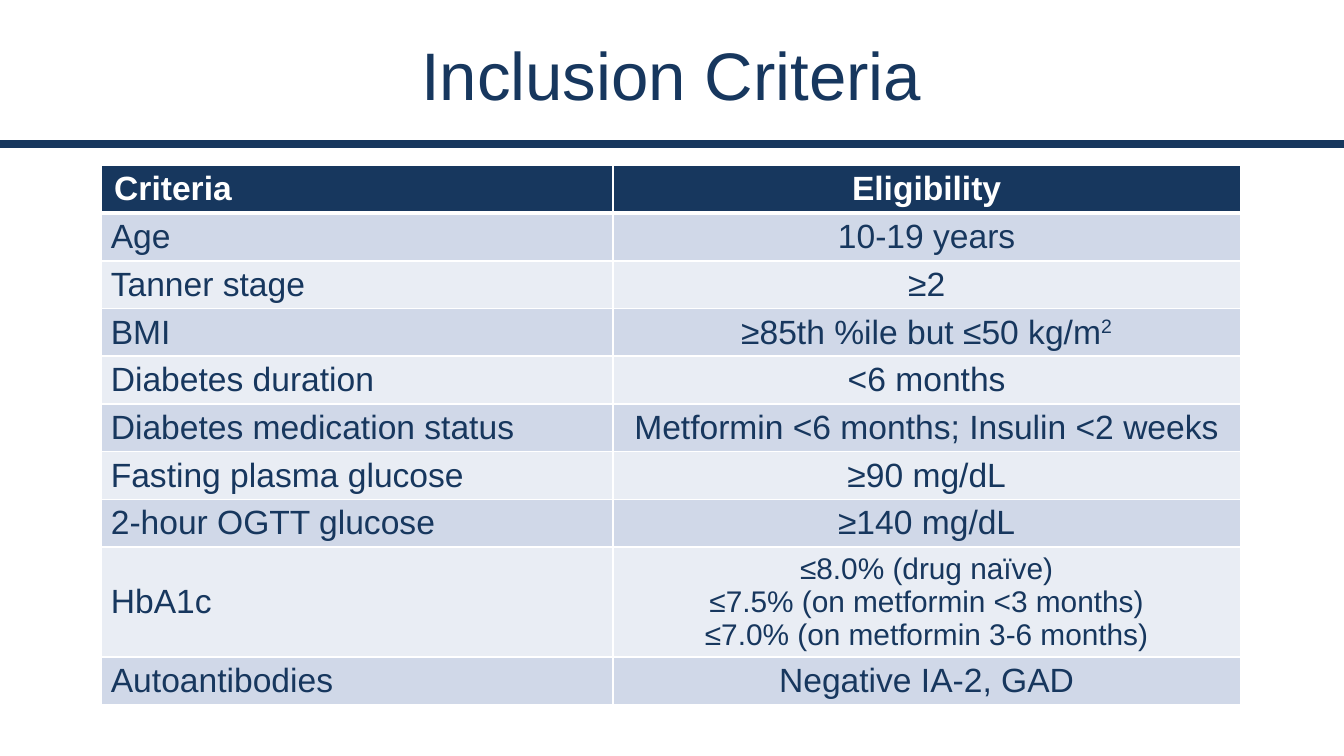
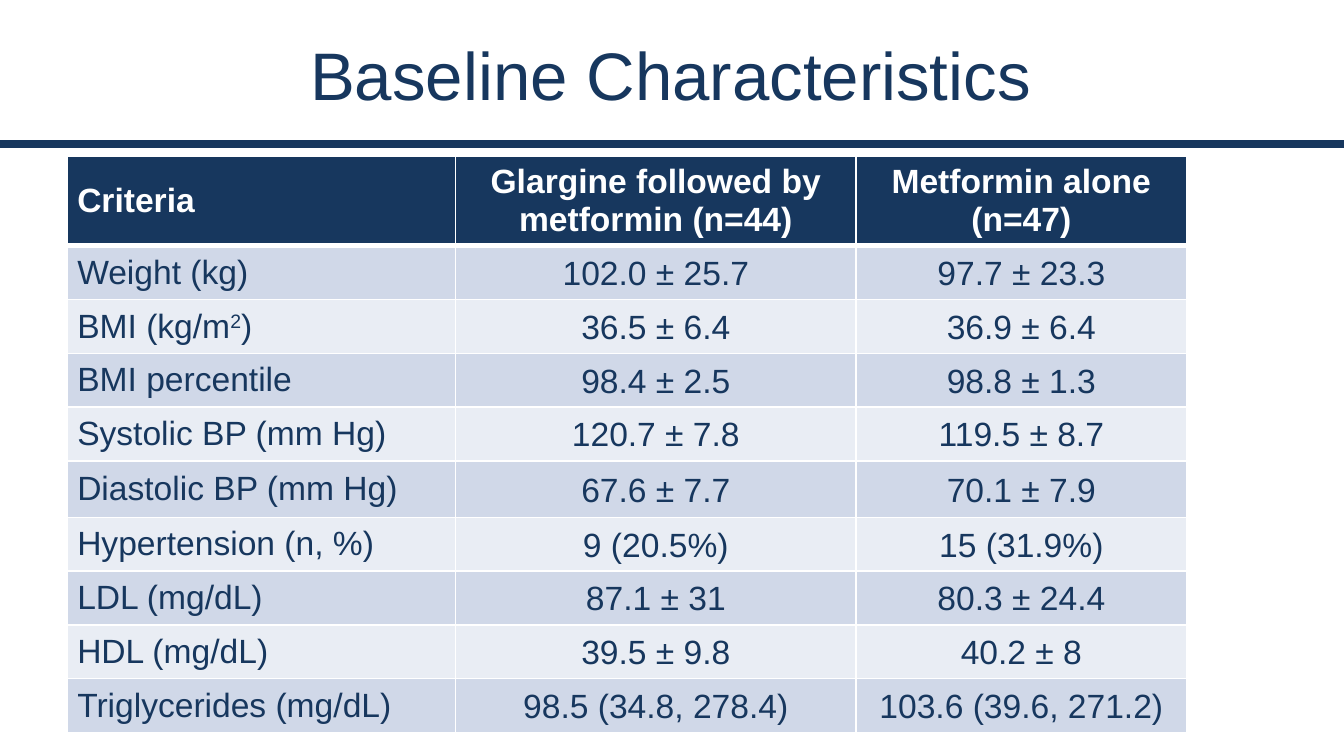
import dataclasses
import itertools

import lxml.etree
import pptx
import pptx.dml.color
import pptx.enum.shapes
import pptx.enum.text
import pptx.oxml.ns
import pptx.slide
import pptx.table
import pptx.text.text
import pptx.util

Inches = pptx.util.Inches
Align = pptx.enum.text.PP_ALIGN
MIDDLE = pptx.enum.text.MSO_ANCHOR.MIDDLE
WIDTH = Inches(10)
HEIGHT = WIDTH * 9 // 16
NAVY, WHITE = "17375E", "FFFFFF"
BANDS = ("D0D8E8", "E9EDF4")
INSET = (0.15 / 2, 0.15 / 4)


@dataclasses.dataclass(frozen=True)
class Page:
    """Title, table text and layout of one slide; ^ marks raised text."""
    title: str
    title_left: float
    title_width: float
    left: float
    top: float
    height: float
    widths: tuple[float, ...]
    tall: dict[int, float]
    row: float
    head_inset: tuple[float, float]
    value_inset: tuple[float, float]
    spacing: float | None
    rows: tuple[tuple[str, ...], ...]


PAGES = (
    Page(
        "Inclusion Criteria", 0.21, 9.57, 0.75, 1.23, 4.25, (3.81, 4.67),
        {1: 0.23}, 0.3, (0.1, INSET[1]), INSET, None,
        (
            ("Criteria", "Eligibility"),
            ("Age", "10-19 years"),
            ("Tanner stage", "≥2"),
            ("BMI", "≥85th %ile but ≤50 kg/m^2"),
            ("Diabetes duration", "<6 months"),
            ("Diabetes medication status", "Metformin <6 months; Insulin <2 weeks"),
            ("Fasting plasma glucose", "≥90 mg/dL"),
            ("2-hour OGTT glucose", "≥140 mg/dL"),
            ("HbA1c", "≤8.0% (drug naïve)\n≤7.5% (on metformin <3 months)\n"
                      "≤7.0% (on metformin 3-6 months)"),
            ("Autoantibodies", "Negative IA-2, GAD"),
        ),
    ),
    Page(
        "Baseline Characteristics", 0.12, 9.74, 0.5, 1.16, 4.3,
        (2.89, 2.98, 2.46), {0: 0.67, 5: 0.42}, 0.4, INSET, (0, 0), 1.07,
        (
            ("Criteria", "Glargine followed by metformin (n=44)", "Metformin alone\n(n=47)"),
            ("Weight (kg)", "102.0 ± 25.7", "97.7 ± 23.3"),
            ("BMI (kg/m^2^)", "36.5 ± 6.4", "36.9 ± 6.4"),
            ("BMI percentile", "98.4 ± 2.5", "98.8 ± 1.3"),
            ("Systolic BP (mm Hg)", "120.7 ± 7.8", "119.5 ± 8.7"),
            ("Diastolic BP (mm Hg)", "67.6 ± 7.7", "70.1 ± 7.9"),
            ("Hypertension (n, %)", "9 (20.5%)", "15 (31.9%)"),
            ("LDL (mg/dL)", "87.1 ± 31", "80.3 ± 24.4"),
            ("HDL (mg/dL)", "39.5 ± 9.8", "40.2 ± 8"),
            ("Triglycerides (mg/dL)", "98.5 (34.8, 278.4)", "103.6 (39.6, 271.2)"),
        ),
    ),
)


def paint(target: object, color: str) -> None:
    if hasattr(target, "solid"):
        target.solid()
        target = target.fore_color
    target.rgb = pptx.dml.color.RGBColor.from_string(color)


def assign(target: object, values: dict[str, object]) -> None:
    for name, value in values.items():
        setattr(target, name, value)


def inset(target: object, across: float, down: float) -> None:
    assign(target, {
        "margin_left": Inches(across), "margin_right": Inches(across),
        "margin_top": Inches(down), "margin_bottom": Inches(down),
        "vertical_anchor": MIDDLE,
    })


def style(font: pptx.text.text.Font, size: float, color: str, bold: bool = False) -> None:
    assign(font, {"name": "Arial", "size": pptx.util.Pt(size), "bold": bold})
    paint(font.color, color)


def border(cell: pptx.table._Cell, bottom: float) -> None:
    props = cell._tc.get_or_add_tcPr()
    for side, width in (("L", 1), ("R", 1), ("T", 1), ("B", bottom)):
        line = lxml.etree.SubElement(
            props, pptx.oxml.ns.qn(f"a:ln{side}"), w=str(pptx.util.Pt(width)))
        fill = lxml.etree.SubElement(line, pptx.oxml.ns.qn("a:solidFill"))
        lxml.etree.SubElement(fill, pptx.oxml.ns.qn("a:srgbClr"), val=WHITE)


def write(cell: pptx.table._Cell, text: str, size: float, color: str, bold: bool,
          form: dict[str, object]) -> None:
    cell.text = "\n" * text.count("\n")
    for para, line in zip(cell.text_frame.paragraphs, text.split("\n")):
        assign(para, form)
        for part, raised in zip(line.split("^"), itertools.cycle((False, True))):
            run = para.add_run()
            run.text = part
            style(run.font, size, color, bold)
            if raised:
                run._r.get_or_add_rPr().set("baseline", "30000")


def add_grid(slide: pptx.slide.Slide, page: Page) -> None:
    frame = slide.shapes.add_table(
        len(page.rows), len(page.widths), Inches(page.left), Inches(page.top),
        Inches(sum(page.widths)), Inches(page.height))
    grid = frame.table
    for column, width in zip(grid.columns, page.widths):
        column.width = Inches(width)
    for i, texts in enumerate(page.rows):
        head = i == 0
        grid.rows[i].height = Inches(page.tall.get(i, page.row))
        for j, text in enumerate(texts):
            cell = grid.cell(i, j)
            value = not head and j > 0
            margins = page.head_inset if head else page.value_inset if value else INSET
            inset(cell, *margins)
            border(cell, 3 if head else 1)
            paint(cell.fill, NAVY if head else BANDS[(i - 1) % 2])
            form = {"alignment": Align.CENTER if j else Align.LEFT,
                    "line_spacing": page.spacing if value else None}
            size = 16 if value and "\n" in text else 18
            write(cell, text, size, WHITE if head else NAVY, head, form)
    frame.height = Inches(page.height)


def add_title(slide: pptx.slide.Slide, page: Page) -> None:
    title = slide.shapes.title
    assign(title, {
        "left": Inches(page.title_left), "top": Inches(0.08),
        "width": Inches(page.title_width), "height": Inches(0.94),
    })
    frame = title.text_frame
    frame.text = page.title
    frame.auto_size = pptx.enum.text.MSO_AUTO_SIZE.NONE
    inset(frame, *INSET)
    para = frame.paragraphs[0]
    para.alignment = Align.CENTER
    style(para.runs[0].font, 36, NAVY)


def add_rule(slide: pptx.slide.Slide) -> None:
    """Draw the rule below the title and move it to the shared layout."""
    rule = slide.shapes.add_connector(
        pptx.enum.shapes.MSO_CONNECTOR.STRAIGHT,
        Inches(0), Inches(1.07), Inches(10.01), Inches(1.07))
    paint(rule.line.fill, NAVY)
    rule.line.width = pptx.util.Pt(4.5)
    lxml.etree.SubElement(rule._element.spPr, pptx.oxml.ns.qn("a:effectLst"))
    slide.slide_layout.shapes._spTree.append(rule._element)


def main() -> None:
    deck = pptx.Presentation()
    assign(deck, {"slide_width": WIDTH, "slide_height": HEIGHT})
    layout = deck.slide_layouts.get_by_name("Title Only")
    for page in PAGES:
        slide = deck.slides.add_slide(layout)
        add_title(slide, page)
        add_grid(slide, page)
    add_rule(slide)
    deck.save("out.pptx")


if __name__ == "__main__":
    main()
